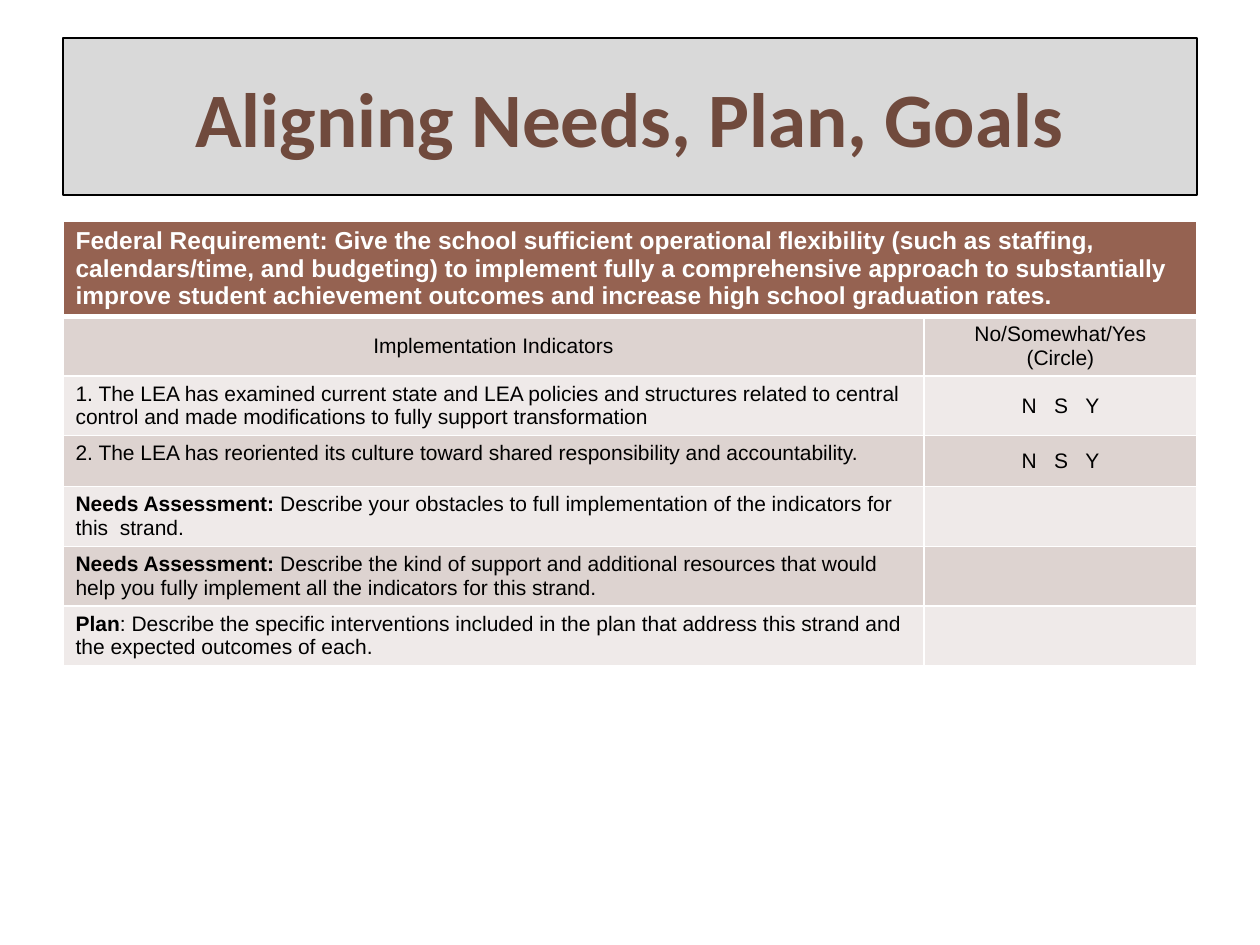
from lxml import etree
from pptx import Presentation
from pptx import util as u
from pptx.dml import color
from pptx.enum import text
from pptx.oxml import ns

SCALE = 914400 // 126
BROWN, PALE, PALER = "956251", "DDD3D0", "EFEAE9"
CIRCLE = "N   S   Y"
HEADER = (
    "Federal Requirement: Give the school sufficient operational flexibility "
    "(such as staffing, calendars/time, and budgeting) to implement fully a "
    "comprehensive approach to substantially improve student achievement "
    "outcomes and increase high school graduation rates."
)
INDICATORS = [
    ("", "1. The LEA has examined current state and LEA policies and structures "
         "related to central control and made modifications to fully support "
         "transformation", CIRCLE),
    ("", "2. The LEA has reoriented its culture toward shared responsibility "
         "and accountability.", CIRCLE),
    ("Needs Assessment: ", "Describe your obstacles to full implementation of "
                           "the indicators for this  strand.", ""),
    ("Needs Assessment: ", "Describe the kind of support and additional "
                           "resources that would help you fully implement all "
                           "the indicators for this strand.", ""),
    ("Plan", ": Describe the specific interventions included in the plan that "
             "address this strand and the expected outcomes of each.", ""),
]


def px(length):
    return u.Emu(length * SCALE)


def rgb(value):
    return color.RGBColor.from_string(value)


def add_run(paragraph, words, size=12, font="Arial", ink="000000", bold=False):
    run = paragraph.add_run()
    run.text = words
    run.font.size = u.Pt(size)
    run.font.name = font
    run.font.bold = bold
    run.font.color.rgb = rgb(ink)


def set_borders(cell, bottom=1, top=1):
    properties = cell._tc.get_or_add_tcPr()
    widths = {"a:lnL": 1, "a:lnR": 1, "a:lnT": top, "a:lnB": bottom}
    for position, (tag, width) in enumerate(widths.items()):
        line = etree.Element(ns.qn(tag), w=str(u.Pt(width)))
        fill = etree.SubElement(line, ns.qn("a:solidFill"))
        etree.SubElement(fill, ns.qn("a:srgbClr"), val="FFFFFF")
        properties.insert(position, line)


def fill_cell(cell, paragraphs, centred=False, middle=False, **formatting):
    if middle:
        cell.vertical_anchor = text.MSO_ANCHOR.MIDDLE
    frame = cell.text_frame
    for index, (lead, words) in enumerate(paragraphs):
        paragraph = frame.add_paragraph() if index else frame.paragraphs[0]
        if centred:
            paragraph.alignment = text.PP_ALIGN.CENTER
        if lead:
            add_run(paragraph, lead, bold=True)
        if words:
            add_run(paragraph, words, **formatting)


def place_title(slide, left, top, width, height):
    title = slide.shapes.title
    title.left, title.top = px(left), px(top)
    title.width, title.height = px(width), px(height)
    title.fill.solid()
    title.fill.fore_color.rgb = rgb("D9D9D9")
    title.line.color.rgb = rgb("000000")
    title.line.width = u.Pt(0.75)
    title.text_frame.vertical_anchor = text.MSO_ANCHOR.MIDDLE
    paragraph = title.text_frame.paragraphs[0]
    paragraph.alignment = text.PP_ALIGN.CENTER
    add_run(paragraph, "Aligning Needs, Plan, Goals", size=44, font="Calibri",
            ink="704A3D", bold=True)


def place_indicators(slide, left, top, width, height):
    answer_width, row_height = 273, 51
    row_count = len(INDICATORS) + 2
    frame = slide.shapes.add_table(row_count, 2, px(left), px(top),
                                   px(width), px(row_height * row_count))
    table = frame.table
    table.horz_banding = False
    table.first_row = False
    table.columns[0].width = px(width - answer_width)
    table.columns[1].width = px(answer_width)
    for index, row in enumerate(table.rows):
        row.height = px(row_height)
        shade = PALE if index % 2 else PALER
        for cell in row.cells:
            cell.fill.solid()
            cell.fill.fore_color.rgb = rgb(shade if index else BROWN)
            set_borders(cell, bottom=1 if index else 3, top=3 if index == 1 else 1)
    frame.height = px(height)

    table.cell(0, 0).merge(table.cell(0, 1))
    fill_cell(table.cell(0, 0), [("", HEADER)], size=14, ink="FFFFFF", bold=True)
    fill_cell(table.cell(1, 0), [("", "Implementation Indicators")],
              centred=True, middle=True)
    fill_cell(table.cell(1, 1), [("", "No/Somewhat/Yes"), ("", "(Circle)")],
              centred=True)
    for index, (lead, words, answer) in enumerate(INDICATORS, start=2):
        fill_cell(table.cell(index, 0), [(lead, words)])
        if answer:
            fill_cell(table.cell(index, 1), [("", answer)], centred=True, middle=True)


def main():
    presentation = Presentation()
    presentation.slide_width, presentation.slide_height = px(1260), px(945)
    slide = presentation.slides.add_slide(presentation.slide_layouts[5])
    place_title(slide, 63, 38, 1134, 157)
    place_indicators(slide, 63, 221, 1134, 467)
    presentation.save("out.pptx")


if __name__ == "__main__":
    main()
